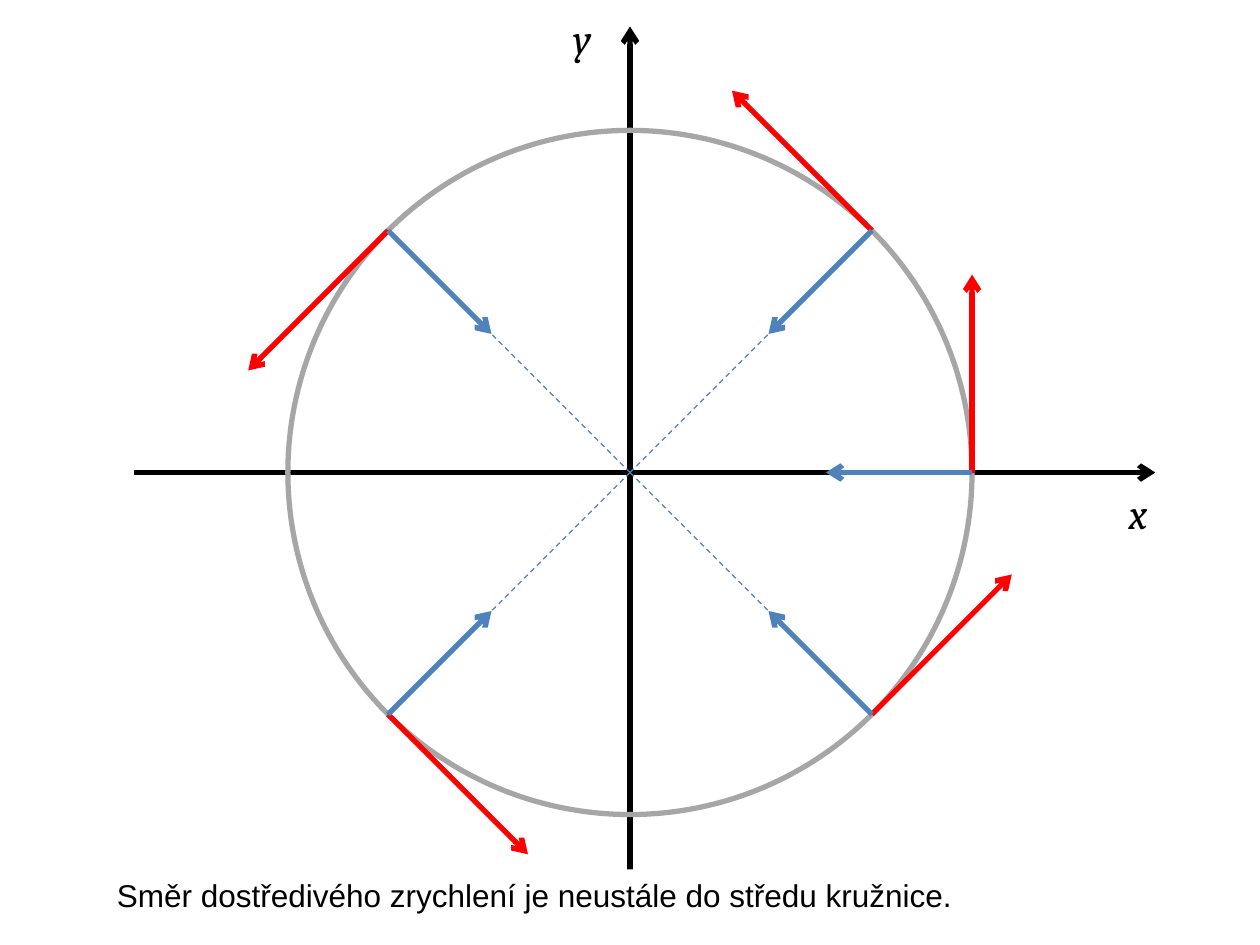
from math import cos, radians, sin

from lxml.etree import SubElement
from pptx import Presentation
from pptx.dml.color import RGBColor
from pptx.enum.dml import MSO_LINE
from pptx.enum.shapes import MSO_CONNECTOR, MSO_SHAPE
from pptx.enum.text import MSO_ANCHOR, PP_ALIGN
from pptx.oxml.ns import qn
from pptx.util import Inches, Pt

THEME = {
    "axis": RGBColor(0x00, 0x00, 0x00),
    "circle": RGBColor(0xA6, 0xA6, 0xA6),
    "velocity": RGBColor(0xFF, 0x00, 0x00),
    "acceleration": RGBColor(0x4F, 0x81, 0xBD),
    "paper": RGBColor(0xFF, 0xFF, 0xFF),
    "thick": Pt(3),
    "thin": Pt(0.75),
    "label": {"name": "Cambria", "size": Pt(24), "italic": True},
    "caption": {"name": "Arial", "size": Pt(18)},
}

presentation = Presentation()
presentation.slide_width, presentation.slide_height = Inches(10), Inches(7.5)
slide = presentation.slides.add_slide(presentation.slide_layouts[6])

# Grid of 100 columns by 75 rows with square cells
CELL = presentation.slide_width / 100
CENTRE_X, CENTRE_Y = 50, 37.5
RADIUS = 27.15
VELOCITY, ACCELERATION = 15.7, 11.6


def cells(*values):
    return [round(value * CELL) for value in values]


def add_line(start, end, colour, arrow=True):
    """Draw a thick arrow, or a thin dashed line when arrow is False."""
    connector = slide.shapes.add_connector(
        MSO_CONNECTOR.STRAIGHT, *cells(*start, *end))
    connector.line.color.rgb = THEME[colour]
    connector.line.width = THEME["thick" if arrow else "thin"]
    if arrow:
        outline = connector.line._get_or_add_ln()
        SubElement(outline, qn("a:tailEnd"), type="arrow")
    else:
        connector.line.dash_style = MSO_LINE.DASH
    SubElement(connector._element.spPr, qn("a:effectLst"))


# Axes
add_line((10.6, CENTRE_Y), (91.7, CENTRE_Y), "axis")
add_line((CENTRE_X, 71.7), (CENTRE_X, 2.1), "axis")

# Circle
circle = slide.shapes.add_shape(
    MSO_SHAPE.OVAL,
    *cells(CENTRE_X - RADIUS, CENTRE_Y - RADIUS, 2 * RADIUS, 2 * RADIUS))
circle.shadow.inherit = False
circle.fill.background()
circle.line.color.rgb = THEME["circle"]
circle.line.width = THEME["thick"]

# Axis labels and caption: text, box, style
texts = [
    ("x", (88.6, 38.2, 11, 5), "label"),
    ("y", (44.5, 0.5, 11, 5), "label"),
    ("Směr dostředivého zrychlení je neustále do středu kružnice.",
     (8.3, 69, 88.2, 5.9), "caption"),
]
for text, box, style in texts:
    shape = slide.shapes.add_textbox(*cells(*box))
    if style == "caption":
        shape.fill.solid()
        shape.fill.fore_color.rgb = THEME["paper"]
    shape.text_frame.word_wrap = True
    shape.text_frame.vertical_anchor = MSO_ANCHOR.TOP
    paragraph = shape.text_frame.paragraphs[0]
    paragraph.alignment = PP_ALIGN.LEFT
    run = paragraph.add_run()
    run.text = text
    run.font.color.rgb = THEME["axis"]
    for attribute, value in THEME[style].items():
        setattr(run.font, attribute, value)

# Velocity along the tangent and acceleration towards the centre
for angle in (0, 45, 135, 225, 315):
    across, up = cos(radians(angle)), sin(radians(angle))
    point = (CENTRE_X + RADIUS * across, CENTRE_Y - RADIUS * up)
    velocity_tip = (point[0] - VELOCITY * up, point[1] - VELOCITY * across)
    acceleration_tip = (point[0] - ACCELERATION * across,
                        point[1] + ACCELERATION * up)
    add_line(point, velocity_tip, "velocity")
    add_line(point, acceleration_tip, "acceleration")
    if angle:
        add_line((CENTRE_X, CENTRE_Y), point, "acceleration", arrow=False)

presentation.save("out.pptx")
